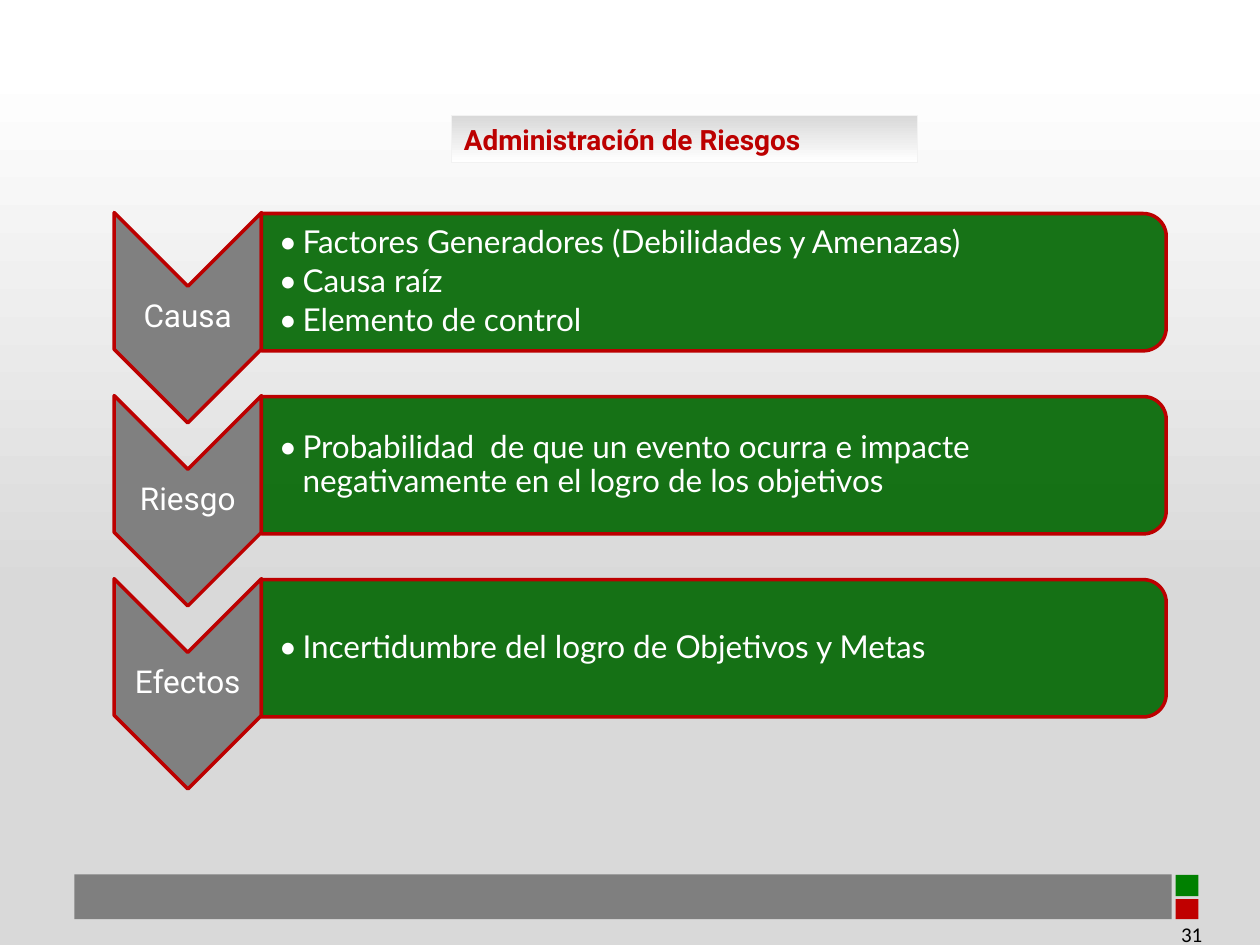
from lxml.etree import SubElement
from pptx import Presentation
from pptx.dml.color import RGBColor
from pptx.enum.shapes import MSO_SHAPE
from pptx.enum.text import MSO_ANCHOR, MSO_AUTO_SIZE, PP_ALIGN
from pptx.oxml.ns import qn
from pptx.util import Pt

WHITE = RGBColor(0xFF, 0xFF, 0xFF)
BLACK = RGBColor(0x00, 0x00, 0x00)
PALE = RGBColor(0xF2, 0xF2, 0xF2)
SILVER = RGBColor(0xD9, 0xD9, 0xD9)
GRAY = RGBColor(0x80, 0x80, 0x80)
FOOTER_GRAY = RGBColor(0x7F, 0x7F, 0x7F)
RED = RGBColor(0xBC, 0x00, 0x00)
FOOTER_RED = RGBColor(0xC0, 0x00, 0x00)
GREEN = RGBColor(0x00, 0x66, 0x00)
FOOTER_GREEN = RGBColor(0x00, 0x80, 0x00)

ROW_PITCH = 104.6
ROWS = [
    ("Causa", ["Factores Generadores (Debilidades y Amenazas)",
               "Causa raíz",
               "Elemento de control"]),
    ("Riesgo", ["Probabilidad  de que un evento ocurra e impacte "
                "negativamente en el logro de los objetivos"]),
    ("Efectos", ["Incertidumbre del logro de Objetivos y Metas"]),
]


class SlideBuilder:
    """Holds the slide and its style; all lengths are in points."""
    label_font = "Roboto"
    list_font = "Lato"
    size = 18
    line_width = 2
    indent = 13.5

    def __init__(self, s):
        self.s = s

    def shape(self, kind, x, y, w, h, color=None, line=None):
        sp = self.s.shapes.add_shape(kind, Pt(x), Pt(y), Pt(w), Pt(h))
        sp.shadow.inherit = False
        if color is not None:
            sp.fill.solid()
            sp.fill.fore_color.rgb = color
        if line is None:
            sp.line.fill.background()
        else:
            sp.line.color.rgb = line
            sp.line.width = Pt(self.line_width)
        return sp

    def turned(self, kind, x, y, w, h, color):
        """Shape turned by 90 degrees that covers the box x, y, w, h."""
        shift = (w - h) / 2
        sp = self.shape(kind, x + shift, y - shift, h, w, color, RED)
        sp.rotation = 90
        return sp

    def gradient(self, sp, stops):
        """Linear gradient running from bottom to top."""
        sp.fill.gradient()
        sp.fill.gradient_angle = 90
        stop_list = sp._element.spPr.find(qn("a:gradFill")).find(qn("a:gsLst"))
        for old in list(stop_list):
            stop_list.remove(old)
        for percent, color in stops:
            stop = SubElement(stop_list, qn("a:gs"), pos=str(percent * 1000))
            SubElement(stop, qn("a:srgbClr"), val=str(color))

    def alpha(self, sp, percent):
        color = sp._element.spPr.find(qn("a:solidFill")).find(qn("a:srgbClr"))
        SubElement(color, qn("a:alpha"), val=str(percent * 1000))

    def font(self, p, name, size, color, bold=False):
        for r in p.runs:
            r.font.name = name
            r.font.size = Pt(size)
            r.font.color.rgb = color
            r.font.bold = bold

    def text(self, x, y, w, h, text, align=PP_ALIGN.LEFT, inset=0.7):
        tb = self.s.shapes.add_textbox(Pt(x), Pt(y), Pt(w), Pt(h))
        tf = tb.text_frame
        tf.word_wrap = True
        tf.vertical_anchor = MSO_ANCHOR.MIDDLE
        tf.margin_left = Pt(inset)
        tf.margin_top = tf.margin_right = tf.margin_bottom = Pt(0.7)
        tf.text = text
        for p in tf.paragraphs:
            p.alignment = align
        return tf

    def label(self, x, y, w, h, text):
        p = self.text(x, y, w, h, text, PP_ALIGN.CENTER).paragraphs[0]
        p.line_spacing = 0.9
        self.font(p, self.label_font, self.size, WHITE)

    def bullets(self, x, y, w, h, items):
        tf = self.text(x, y, w, h, "\n".join(items), inset=10)
        for p in tf.paragraphs:
            p.level = 1
            p.line_spacing = 0.9
            p.space_after = Pt(2.7)
            pPr = p._p.get_or_add_pPr()
            pPr.set("marL", str(Pt(self.indent)))
            pPr.set("indent", str(-Pt(self.indent)))
            SubElement(pPr, qn("a:buFont"), typeface=self.list_font)
            SubElement(pPr, qn("a:buChar"), char="•")
            self.font(p, self.list_font, self.size, WHITE)

    def title(self, x, y, w, h, text):
        sp = self.s.shapes.title
        sp.left, sp.top, sp.width, sp.height = Pt(x), Pt(y), Pt(w), Pt(h)
        self.gradient(sp, [(0, WHITE), (100, SILVER)])
        sp.line.color.rgb = PALE
        sp.line.width = Pt(0.75)
        tf = sp.text_frame
        tf.text = text
        tf.word_wrap = True
        tf.auto_size = MSO_AUTO_SIZE.NONE
        tf.vertical_anchor = MSO_ANCHOR.TOP
        p = tf.paragraphs[0]
        p.alignment = PP_ALIGN.LEFT
        self.font(p, self.label_font, 16, RED, True)
        # Bring the title in front of the backdrop
        self.s.shapes._spTree.append(sp._element)


def main():
    prs = Presentation()
    prs.slide_width, prs.slide_height = Pt(720), Pt(540)
    s = prs.slides.add_slide(prs.slide_layouts[5])
    b = SlideBuilder(s)

    # Backdrop
    backdrop = b.shape(MSO_SHAPE.RECTANGLE, 0, 0, 720, 540)
    b.gradient(backdrop, [(0, SILVER), (37, SILVER), (93, WHITE)])

    # Footer
    b.shape(MSO_SHAPE.RECTANGLE, 671.8, 513.8, 13, 11.5, FOOTER_RED)
    b.shape(MSO_SHAPE.RECTANGLE, 671.8, 500, 13, 12.2, FOOTER_GREEN)
    b.shape(MSO_SHAPE.RECTANGLE, 42.5, 499.7, 627, 25.5, FOOTER_GRAY)
    number = b.text(532.8, 527.6, 155, 12.4, "31", PP_ALIGN.RIGHT)
    b.font(number.paragraphs[0], "Calibri", 12, BLACK)

    # Rows: chevron with label, bar with list
    for i, (name, items) in enumerate(ROWS):
        y = 122 + i * ROW_PITCH
        b.turned(MSO_SHAPE.CHEVRON, 65.2, y - 0.5, 84.2, 120.2, GRAY)
        b.label(65.2, y + 41.5, 84.2, 36, name)
        bar = b.turned(MSO_SHAPE.ROUND_2_SAME_RECTANGLE,
                       149.4, y, 517, 78.5, GREEN)
        b.alpha(bar, 90)
        b.bullets(149.4, y + 4, 513.4, 70.6, items)

    b.title(257.8, 66.2, 266.4, 26.6, "Administración de Riesgos")

    prs.save("out.pptx")


if __name__ == "__main__":
    main()
